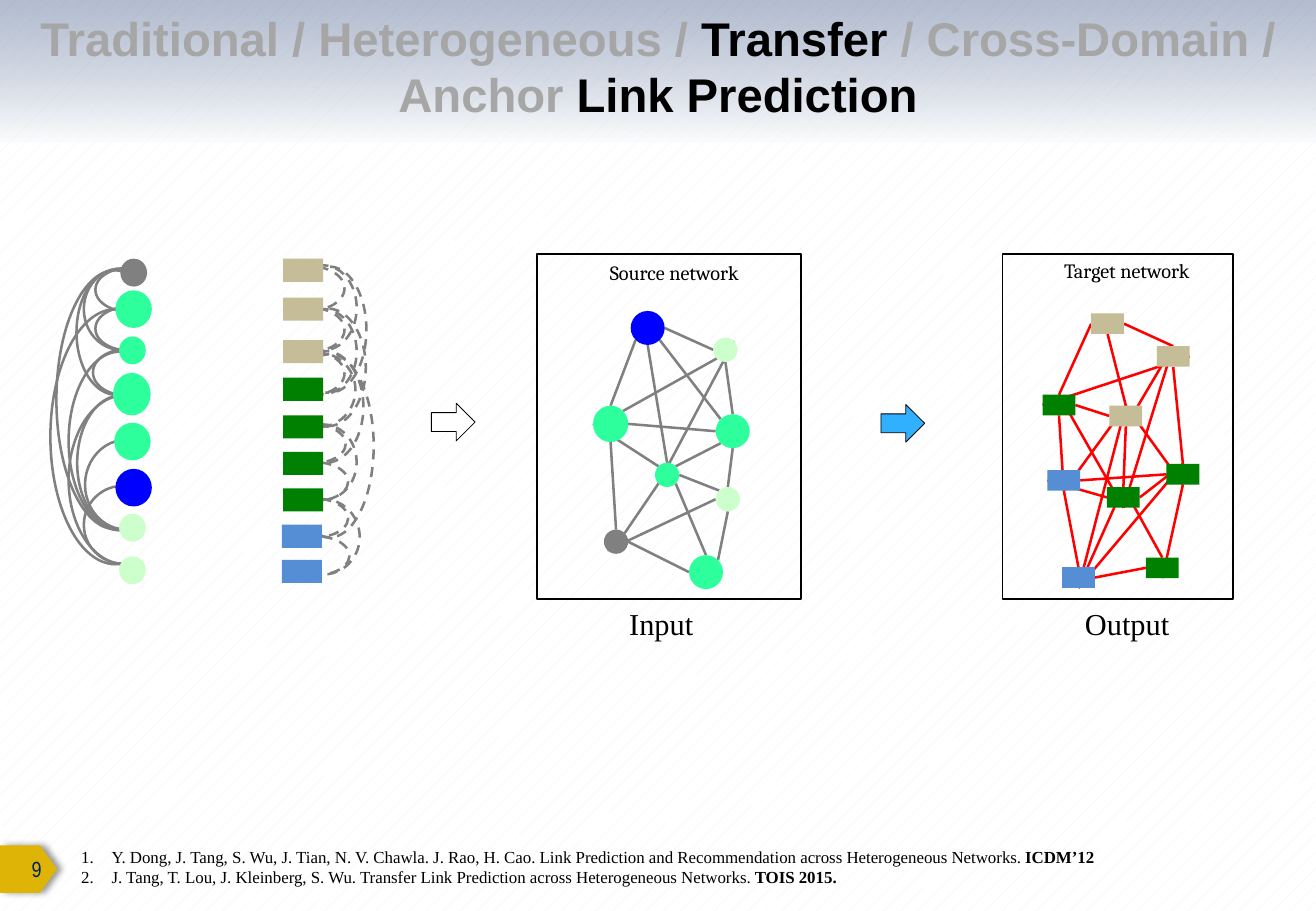
import lxml.etree
import pptx
import pptx.dml.color
import pptx.enum.dml
import pptx.enum.shapes
import pptx.enum.text
import pptx.oxml.ns
import pptx.util

THEME = {
    "black": "000000", "muted": "A6A6A6", "navy": "002060", "mist": "F6F9FC",
    "white": "FFFFFF", "dots": "F2F2F2", "gold": "DEB406", "sky": "30B0FF",
    "gray": "808080", "red": "FF0000", "mint": "2DFF9D", "pale": "CCFFCC",
    "blue": "0000FF", "tan": "C4BD97", "green": "008000", "steel": "558ED5",
    "title": 28, "caption": 18, "page": 13, "heading": 12, "reference": 10,
    "sans": "Arial", "narrow": "Arial Narrow", "serif": "Times New Roman", "label": "Cambria",
    "edge": 1.5, "frame": 1, "outline": 0.5,
}
COLUMNS, ROWS = 10.83, 7.5
CELL = pptx.util.Inches(1)
SHAPE = pptx.enum.shapes.MSO_SHAPE
ALIGN = pptx.enum.text.PP_ALIGN
MIDDLE = pptx.enum.text.MSO_ANCHOR.MIDDLE
RGB = pptx.dml.color.RGBColor.from_string
qn = pptx.oxml.ns.qn

presentation = pptx.Presentation()
presentation.slide_width = round(COLUMNS * CELL)
presentation.slide_height = round(ROWS * CELL)
slide = presentation.slides.add_slide(presentation.slide_layouts[5])


def draw(kind, box, fill=None, line=None, weight=1):
    """Add a preset shape on the grid, with optional fill and outline."""
    shape = slide.shapes.add_shape(kind, *[round(n * CELL) for n in box])
    shape.shadow.inherit = False
    if fill:
        shape.fill.solid()
        shape.fill.fore_color.rgb = RGB(THEME[fill])
    else:
        shape.fill.background()
    if line:
        shape.line.color.rgb = RGB(THEME[line])
        shape.line.width = pptx.util.Pt(weight)
    else:
        shape.line.fill.background()
    return shape


def write(shape, paragraphs, font, size, align=ALIGN.LEFT):
    """Fill a text frame; each run is (text, colour, bold)."""
    frame = shape.text_frame
    frame.word_wrap = True
    for number, runs in enumerate(paragraphs):
        paragraph = frame.add_paragraph() if number else frame.paragraphs[0]
        paragraph.alignment = align
        for text, color, bold in runs:
            run = paragraph.add_run()
            run.text = text
            run.font.name = THEME[font]
            run.font.size = pptx.util.Pt(THEME[size])
            run.font.bold = bold
            run.font.color.rgb = RGB(THEME[color])
    return frame


# Background and header band
background = slide.background.fill
background.patterned()
background.pattern = pptx.enum.dml.MSO_PATTERN.PERCENT_5
background.fore_color.rgb = RGB(THEME["dots"])
background.back_color.rgb = RGB(THEME["white"])

band = draw(SHAPE.RECTANGLE, (0, 0, COLUMNS, 1.17))
band.fill.gradient()
band.fill.gradient_angle = 270
for stop, color in zip(band.fill.gradient_stops, ("navy", "mist")):
    stop.color.rgb = RGB(THEME[color])
for color, alpha in zip(band._element.spPr.iter(qn("a:srgbClr")), ("30000", "40000")):
    lxml.etree.SubElement(color, qn("a:alpha"), val=alpha)

# Title, in front of the band
title = slide.shapes.title
slide.shapes._spTree.append(title._element)
title.left, title.top, title.width, title.height = [
    round(n * CELL) for n in (0, 0.01, COLUMNS, 1.06)]
frame = write(title, [[
    ("Traditional / Heterogeneous /", "muted", True), (" Transfer ", "black", True),
    ("/ Cross-Domain / Anchor ", "muted", True), ("Link Prediction", "black", True),
]], "sans", "title", ALIGN.CENTER)
frame.vertical_anchor = MIDDLE
frame.auto_size = pptx.enum.text.MSO_AUTO_SIZE.NONE

# Page number tag with its shadow
tag = draw(SHAPE.PENTAGON, (0, 6.96, 0.47, 0.39), "gold")
tag.adjustments[0] = 0.36
shadow = lxml.etree.SubElement(
    tag._element.spPr.find(qn("a:effectLst")), qn("a:outerShdw"),
    blurRad=str(pptx.util.Pt(4)), dist=str(pptx.util.Pt(3)), dir="0", rotWithShape="0")
shade = lxml.etree.SubElement(shadow, qn("a:srgbClr"), val=THEME["black"])
lxml.etree.SubElement(shade, qn("a:alpha"), val="40000")

# Networks: nodes are (colour, left, top, size); links join compass points of nodes
SITES = {"N": (0, -1), "W": (-1, 0), "S": (0, 1), "E": (1, 0), "NE": (0.71, -0.71),
         "NW": (-0.71, -0.71), "SE": (0.71, 0.71), "SW": (-0.71, 0.71)}
SMALL, LARGE, BLOCK = (0.2, 0.2), (0.28, 0.28), (0.27, 0.17)
source_nodes = {
    "a": ("gray", 4.97, 4.36, SMALL), "b": ("blue", 5.19, 2.56, LARGE),
    "c": ("pale", 5.89, 4.01, SMALL), "d": ("mint", 4.88, 3.34, (0.29, 0.3)),
    "e": ("mint", 5.67, 4.57, LARGE), "f": ("mint", 5.39, 3.81, SMALL),
    "g": ("pale", 5.87, 2.78, SMALL), "h": ("mint", 5.89, 3.41, LARGE),
}
source_links = (
    "dE-hW dS-aN aE-eW eNE-cS dN-bSW dW-fNW fSE-eN hS-cN fNE-hSW "
    "hN-gS bE-gW bSE-hNW bS-fN aNE-fSW dNE-gSW fSW-gNE cW-aSW cNW-fE")
target_nodes = {
    "a": ("tan", 8.98, 2.58, BLOCK), "b": ("tan", 9.52, 2.85, BLOCK),
    "c": ("green", 8.58, 3.25, BLOCK), "d": ("tan", 9.13, 3.34, BLOCK),
    "e": ("steel", 8.62, 3.87, BLOCK), "f": ("green", 9.6, 3.82, BLOCK),
    "g": ("green", 9.11, 4.01, BLOCK), "h": ("steel", 8.74, 4.67, BLOCK),
    "i": ("green", 9.43, 4.59, BLOCK),
}
target_links = (
    "iW-hE fS-iS eS-hN aW-cN fN-bS dN-aS bN-dS aE-bN dS-gN fW-eE gN-iN dW-cE "
    "gN-hS eS-cS gW-eW fN-gE fS-dN gS-cN eS-dN bE-cW gS-bN dN-hS fN-hS")

for kind, nodes, links, color in (
    (SHAPE.OVAL, source_nodes, source_links, "gray"),
    (SHAPE.RECTANGLE, target_nodes, target_links, "red"),
):
    connectors = []
    for link in links.split():
        ends = [(end[0], end[1:]) for end in link.split("-")]
        points = []
        for name, site in ends:
            _, left, top, (width, height) = nodes[name]
            across, down = SITES[site]
            points += [left + width * (1 + across) / 2, top + height * (1 + down) / 2]
        connector = slide.shapes.add_connector(
            pptx.enum.shapes.MSO_CONNECTOR.STRAIGHT, *[round(n * CELL) for n in points])
        connector.line.color.rgb = RGB(THEME[color])
        connector.line.width = pptx.util.Pt(THEME["edge"])
        lxml.etree.SubElement(connector._element.spPr, qn("a:effectLst"))
        connectors.append((connector, ends))
    drawn = {name: draw(kind, (left, top, *size), fill)
             for name, (fill, left, top, size) in nodes.items()}
    if kind == SHAPE.RECTANGLE:
        for connector, ((first, start), (last, finish)) in connectors:
            connector.begin_connect(drawn[first], "NWSE".index(start))
            connector.end_connect(drawn[last], "NWSE".index(finish))

# Arcs beside the two node columns: left, top, width, height, start and end in degrees
circle_arcs = [
    (0.88, 2.11, 0.36, 0.55, 198.7, 336.8), (0.88, 2.43, 0.36, 0.55, 198.7, 336.8),
    (0.66, 2.24, 0.67, 0.61, 181, 3.1), (0.44, 2.41, 1.03, 0.65, 181, 3.1),
    (0.85, 2.79, 0.38, 0.55, 198.7, 336.8), (0.44, 3.45, 1.11, 0.72, 177.6, 3.1),
    (0.25, 3.21, 1.47, 0.84, 177.6, 3.1), (-0.12, 2.81, 2.13, 0.96, 177.6, 3.1),
    (0.67, 3.65, 0.74, 0.68, 177.6, 3.1), (0.69, 4, 0.64, 0.64, 180, 349.8),
    (-0.1, 3.06, 2.1, 1.07, 177, 3.1), (0.33, 3.49, 1.39, 0.92, 181.1, 3.1),
]
block_arcs = [
    (2.38, 2.1, 0.36, 0.55, 198.7, 336.8), (2.38, 2.44, 0.36, 0.55, 198.7, 336.8),
    (2.31, 2.26, 0.7, 0.55, 173.3, 4.6), (2.38, 2.8, 0.36, 0.55, 198.7, 336.8),
    (2.32, 2.91, 0.61, 0.6, 173.3, 4.1), (2.22, 3.04, 0.92, 0.62, 173.3, 3.7),
    (2.19, 2.41, 1.04, 0.61, 164.7, 3.7), (2.31, 2.62, 0.7, 0.55, 173.3, 4.6),
    (2.21, 2.71, 0.97, 0.63, 164.7, 3.7), (2.41, 3.38, 0.32, 0.55, 198.7, 336.8),
    (2.43, 3.69, 0.32, 0.55, 198.7, 336.8), (2.35, 3.53, 0.62, 0.55, 173.3, 4.6),
    (2.43, 3.99, 0.32, 0.55, 198.7, 40.9), (2.44, 4.3, 0.32, 0.55, 198.7, 336.8),
    (2.35, 4.12, 0.62, 0.6, 173.3, 4.6), (1.96, 3.31, 1.51, 0.72, 173.3, 9.9),
]
for arcs, rotation, dash in ((circle_arcs, 270, None),
                             (block_arcs, 90, pptx.enum.dml.MSO_LINE.DASH)):
    for *box, start, end in arcs:
        arc = draw(SHAPE.ARC, box, None, "gray", THEME["edge"])
        arc.rotation = rotation
        arc.line.dash_style = dash
        # One degree is 60000 units, and an adjustment of 1 is 100000 units
        arc.adjustments[0], arc.adjustments[1] = start * 0.6, end * 0.6

# Node columns
for color, left, top, width, height in (
    ("gray", 0.99, 2.13, 0.22, 0.23), ("mint", 0.95, 2.39, 0.3, 0.31),
    ("mint", 0.98, 2.77, 0.22, 0.23), ("mint", 0.93, 3.07, 0.31, 0.35),
    ("mint", 0.94, 3.48, 0.3, 0.31), ("blue", 0.95, 3.86, 0.3, 0.31),
    ("pale", 0.98, 4.23, 0.22, 0.23), ("pale", 0.98, 4.58, 0.22, 0.23),
):
    draw(SHAPE.OVAL, (left, top, width, height), color)
block_colors = ["tan"] * 3 + ["green"] * 4 + ["steel"] * 2
block_tops = (2.13, 2.45, 2.8, 3.11, 3.42, 3.72, 4.02, 4.32, 4.61)
for color, top in zip(block_colors, block_tops):
    draw(SHAPE.RECTANGLE, (2.32 if color == "steel" else 2.33, top, 0.33, 0.19), color)

# Frames and block arrows
for left, width in ((4.42, 2.17), (8.25, 1.9)):
    draw(SHAPE.RECTANGLE, (left, 2.09, width, 2.84), None, "black", THEME["frame"])
for left, top, color in ((3.55, 3.32, "white"), (7.25, 3.33, "sky")):
    draw(SHAPE.RIGHT_ARROW, (left, top, 0.36, 0.31), color, "black", THEME["outline"])

# Labels, page number and references
references = [
    [("Y. Dong, J. Tang, S. Wu, J. Tian, N. V. Chawla. J. Rao, H. Cao. Link Prediction and "
      "Recommendation across Heterogeneous Networks. ", "black", False),
     ("ICDM’12", "black", True)],
    [("J. Tang, T. Lou, J. Kleinberg, S. Wu. Transfer Link Prediction across Heterogeneous "
      "Networks. ", "black", False), ("TOIS 2015.", "black", True)],
]
for box, paragraphs, font, size in (
    ((4.92, 2.09, 1.41, 0.3), [[("Source network", "black", False)]], "label", "heading"),
    ((8.66, 2.08, 2.17, 0.3), [[("Target network", "black", False)]], "label", "heading"),
    ((5.08, 4.93, 1.25, 0.4), [[("Input", "black", False)]], "serif", "caption"),
    ((8.83, 4.93, 1.25, 0.4), [[("Output", "black", False)]], "serif", "caption"),
    ((-0.1, 6.96, 0.54, 0.38), [[("9", "navy", False)]], "narrow", "page"),
    ((0.57, 6.92, 10.67, 0.44), references, "serif", "reference"),
):
    text_box = slide.shapes.add_textbox(*[round(n * CELL) for n in box])
    frame = write(text_box, paragraphs, font, size)
    if size == "page":
        frame.vertical_anchor = MIDDLE
        frame.paragraphs[0].alignment = ALIGN.RIGHT
    if size == "reference":
        for paragraph in frame.paragraphs:
            properties = paragraph._p.get_or_add_pPr()
            properties.set("marL", str(round(0.25 * CELL)))
            properties.set("indent", str(round(-0.25 * CELL)))
            lxml.etree.SubElement(properties, qn("a:buAutoNum"), type="arabicPeriod")

presentation.save("out.pptx")
